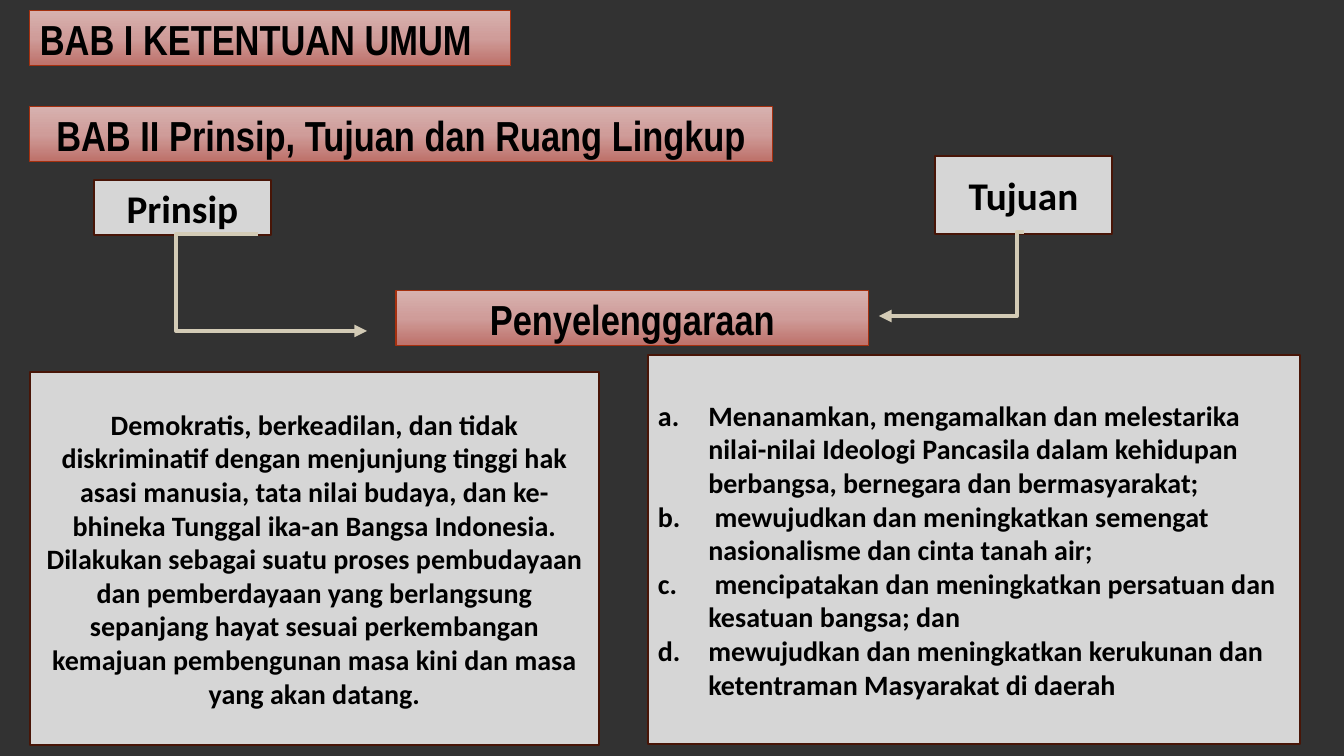
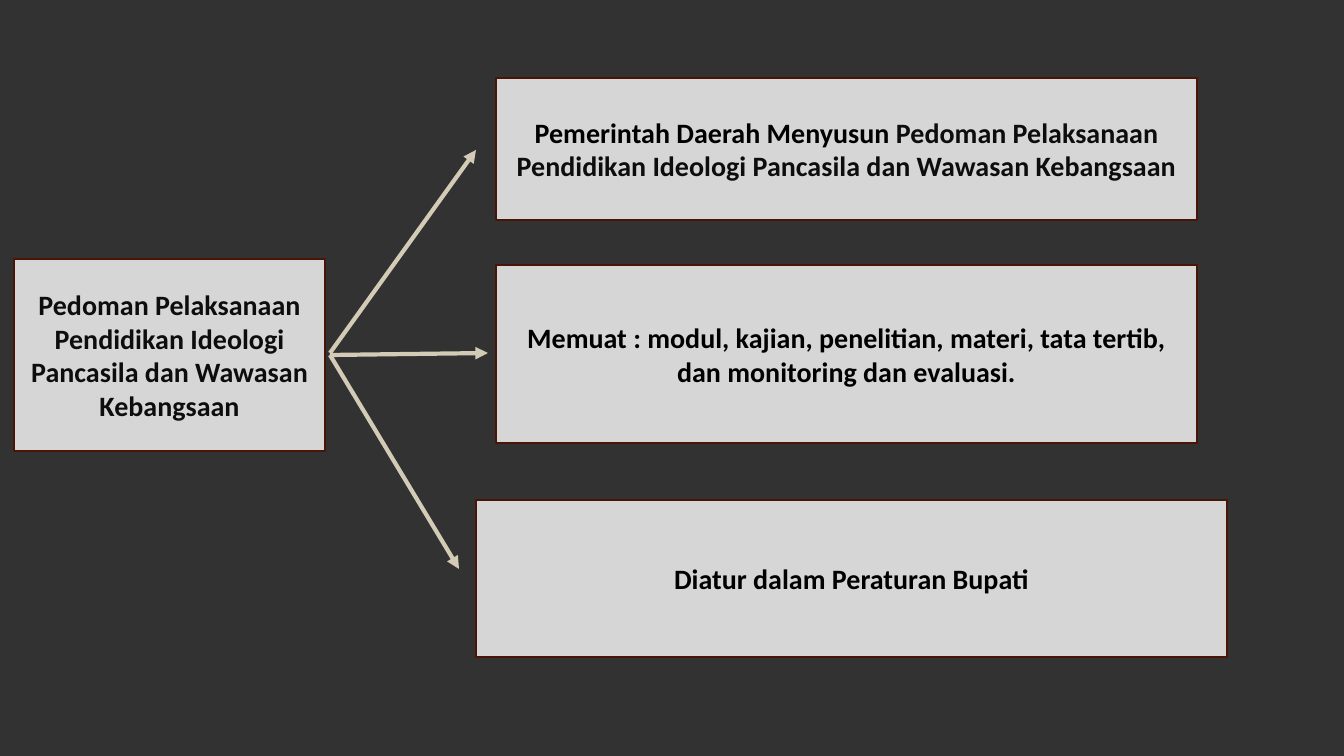
from copy import deepcopy

from lxml import etree
from pptx import Presentation
from pptx.dml.color import RGBColor
from pptx.enum.shapes import MSO_CONNECTOR, MSO_SHAPE
from pptx.enum.text import MSO_ANCHOR, PP_ALIGN
from pptx.oxml.ns import qn
from pptx.util import Pt

RECT = MSO_SHAPE.RECTANGLE
LINE, ELBOW = MSO_CONNECTOR.STRAIGHT, MSO_CONNECTOR.ELBOW
LEFT, MID = PP_ALIGN.LEFT, PP_ALIGN.CENTER
EMU = 914400 / 100.8  # one px

BACK, CARD, EDGE = "323232", "D6D6D6", "481507"
RIM, ARROW = "A5300F", "D3CBB6"
BLACK, SOFT = "000000", "0D0D0D"
FADE = [(0, "D7B1AF"), (0.5, "CF9C99"), (1, "BD7069")]
GUIDE = "Pedoman Pelaksanaan Pendidikan Ideologi Pancasila dan Wawasan Kebangsaan"


def px(*vals):
    return [round(v * EMU) for v in vals]


def rgb(code):
    return RGBColor.from_string(code)


class Deck:
    def __init__(self):
        self.prs = Presentation()
        self.prs.slide_width, self.prs.slide_height = px(1344, 756)
        self.slide = None

    def page(self):
        self.slide = self.prs.slides.add_slide(self.prs.slide_layouts[6])
        fill = self.slide.background.fill
        fill.solid()
        fill.fore_color.rgb = rgb(BACK)

    def box(self, spot, paras, face, size, ink, align, edge, width):
        shape = self.slide.shapes.add_shape(RECT, *px(*spot))
        shape.shadow.inherit = False
        shape.line.color.rgb = rgb(edge)
        shape.line.width = Pt(width)
        frame = shape.text_frame
        frame.word_wrap = True
        frame.vertical_anchor = MSO_ANCHOR.MIDDLE
        for i, text in enumerate(paras):
            para = frame.add_paragraph() if i else frame.paragraphs[0]
            para.text = text
            para.alignment = align
            font = para.font
            font.name, font.size, font.bold = face, Pt(size), True
            font.color.rgb = rgb(ink)
        return shape

    def band(self, spot, text, align=MID):
        """Heading bar with a vertical fade."""
        shape = self.box(spot, [text], "Arial Narrow", 30, BLACK, align, RIM, 0.75)
        fill = shape.fill
        fill.gradient()
        fill.gradient_angle = 270
        stops = shape._element.spPr.find(".//" + qn("a:gsLst"))
        stops.insert(1, deepcopy(stops[0]))
        for stop, (place, code) in zip(fill.gradient_stops, FADE):
            stop.position = place
            stop.color.rgb = rgb(code)

    def card(self, spot, *paras, size=20, ink=BLACK, align=MID):
        """Plain grey box."""
        shape = self.box(spot, paras, "Calibri", size, ink, align, EDGE, 1)
        shape.fill.solid()
        shape.fill.fore_color.rgb = rgb(CARD)
        return shape

    def list(self, spot, *items):
        """Grey box with lettered items."""
        shape = self.card(spot, *items, align=LEFT)
        indent = px(50.4)[0]
        for para in shape.text_frame.paragraphs:
            props = para._p.get_or_add_pPr()
            props.set("marL", str(indent))
            props.set("indent", str(-indent))
            mark = etree.Element(qn("a:buAutoNum"), type="alphaLcPeriod")
            props.insert(0, mark)

    def arrow(self, start, end, bend=None):
        """Arrow; bend is the turn as a share of the width."""
        kind = LINE if bend is None else ELBOW
        link = self.slide.shapes.add_connector(kind, *px(*start, *end))
        link.line.color.rgb = rgb(ARROW)
        link.line.width = Pt(3)
        props = link._element.spPr
        etree.SubElement(props.find(qn("a:ln")), qn("a:tailEnd"), type="triangle")
        etree.SubElement(props, qn("a:effectLst"))
        if bend is not None:
            guides = props.find(".//" + qn("a:avLst"))
            etree.SubElement(guides, qn("a:gd"), name="adj1",
                             fmla=f"val {round(bend * 100000)}")


def main():
    deck = Deck()

    # Chapters, principles and aims
    deck.page()
    deck.band((30, 11, 481, 55), "BAB I KETENTUAN UMUM", LEFT)
    deck.band((30, 107, 743, 55), "BAB II Prinsip, Tujuan dan Ruang Lingkup")
    deck.card((94, 180, 177, 55), "Prinsip", size=28)
    deck.card((935, 156, 177, 78), "Tujuan", size=28)
    deck.card(
        (30, 372, 569, 373),
        "Demokratis, berkeadilan, dan tidak diskriminatif dengan menjunjung "
        "tinggi hak asasi manusia, tata nilai budaya, dan ke-bhineka Tunggal "
        "ika-an Bangsa Indonesia.",
        "Dilakukan sebagai suatu proses pembudayaan dan pemberdayaan yang "
        "berlangsung sepanjang hayat sesuai perkembangan kemajuan pembengunan "
        "masa kini dan masa yang akan datang.")
    deck.list(
        (648, 355, 652, 389),
        "Menanamkan, mengamalkan dan melestarika nilai-nilai Ideologi Pancasila "
        "dalam kehidupan berbangsa, bernegara dan bermasyarakat;",
        " mewujudkan dan meningkatkan semengat nasionalisme dan cinta tanah air;",
        " mencipatakan dan meningkatkan persatuan dan kesatuan bangsa; dan",
        "mewujudkan dan meningkatkan kerukunan dan ketentraman Masyarakat di daerah")
    deck.band((396, 291, 473, 55), "Penyelenggaraan")
    deck.arrow((258, 234), (367, 331), -0.75)
    deck.arrow((1024, 232), (879, 316), 0.05)

    # Guidelines and their contents
    deck.page()
    deck.card((14, 259, 311, 192), GUIDE, ink=SOFT)
    first = deck.card((496, 78, 701, 142), "Pemerintah Daerah Menyusun ")
    run = first.text_frame.paragraphs[0].add_run()
    run.text = GUIDE
    run.font.color.rgb = rgb(SOFT)
    deck.card((496, 265, 701, 178),
              "Memuat : modul, kajian, penelitian, materi, tata tertib, dan "
              "monitoring dan evaluasi.")
    deck.card((476, 500, 751, 157), "Diatur dalam Peraturan Bupati")
    deck.arrow((330, 353), (476, 150))
    deck.arrow((330, 355), (488, 353))
    deck.arrow((330, 355), (459, 569))

    deck.prs.save("out.pptx")


if __name__ == "__main__":
    main()
